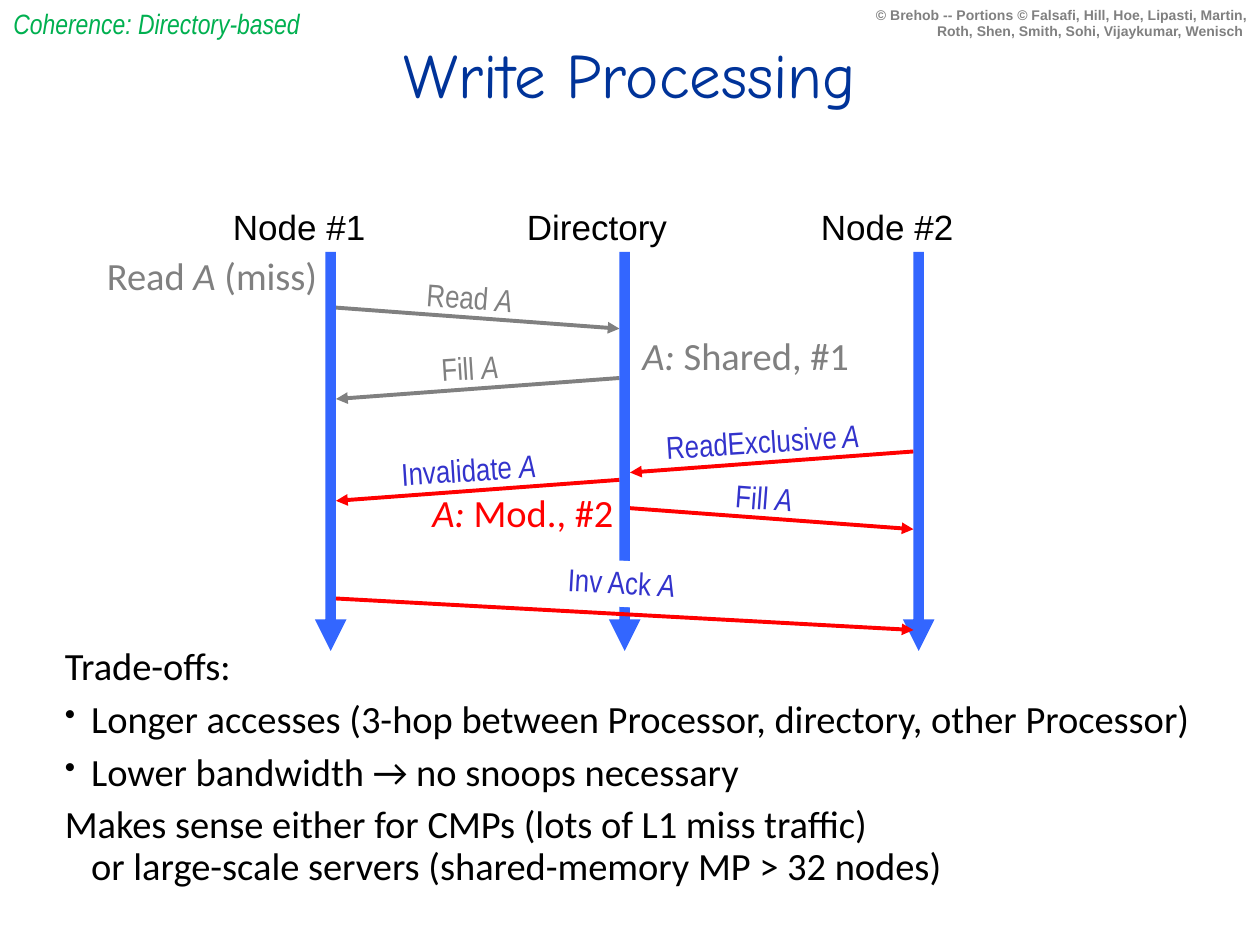
from pptx import Presentation
from pptx.dml.color import RGBColor
from pptx.enum.shapes import MSO_CONNECTOR, MSO_SHAPE
from pptx.enum.text import MSO_ANCHOR, PP_ALIGN
from pptx.oxml.ns import qn
from pptx.util import Inches, Pt
from lxml import etree

LEFT, MID, RIGHT = PP_ALIGN.LEFT, PP_ALIGN.CENTER, PP_ALIGN.RIGHT
TOP, CENTRE = MSO_ANCHOR.TOP, MSO_ANCHOR.MIDDLE
LINE, RECT = MSO_CONNECTOR.STRAIGHT, MSO_SHAPE.RECTANGLE
GRAY, RED, BLUE, INK = "808080", "FF0000", "3366FF", "3333CC"
LANES = {"Node #1": 31, "Directory": 59, "Node #2": 87}
ONE, DIR, TWO = LANES.values()


def rgb(code):
    return RGBColor.from_string(code)


def unit(n):
    """Turn grid steps into a length: 120 columns by 90 rows, 12 to the inch."""
    return Inches(n / 12)


def write(par, text, font="Calibri", size=22, color="000000", bold=False, italic=False):
    """Fill a paragraph; *stars* flip italics and a newline breaks the line."""
    for i, part in enumerate(text.split("*")):
        for j, piece in enumerate(part.split("\n")):
            if j:
                par.add_line_break()
            if not piece:
                continue
            run = par.add_run()
            run.text = piece
            run.font.name, run.font.size = font, Pt(size)
            run.font.color.rgb = rgb(color)
            run.font.bold = bold
            run.font.italic = italic != bool(i % 2)


class Board:
    def __init__(self, deck):
        self.slide = deck.slides.add_slide(deck.slide_layouts[6])
        self.shapes = self.slide.shapes

    def text(self, box, lines, align=LEFT, anchor=TOP, wrap=True, turn=0,
             space=None, before=0, **style):
        shape = self.shapes.add_textbox(*map(unit, box))
        shape.rotation = turn
        frame = shape.text_frame
        frame.word_wrap, frame.vertical_anchor = wrap, anchor
        for i, line in enumerate(lines):
            par = frame.paragraphs[0] if i == 0 else frame.add_paragraph()
            par.alignment, par.line_spacing = align, space
            par.space_before = Pt(before)
            write(par, line, **style)
        return shape

    def bullet(self, par, mark):
        """Hang the paragraph by a quarter inch or so, with a mark if given."""
        props = par._p.get_or_add_pPr()
        props.set("marL", str(unit(2.5)))
        props.set("indent", str(-unit(2.5)))
        if mark:
            etree.SubElement(props, qn("a:buSzPct")).set("val", "80000")
            etree.SubElement(props, qn("a:buChar")).set("char", mark)

    def arrow(self, x1, y1, x2, y2, color, width=2.25):
        line = self.shapes.add_connector(LINE, *map(unit, (x1, y1, x2, y2)))
        line.line.color.rgb, line.line.width = rgb(color), Pt(width)
        tail = etree.SubElement(line.line._get_or_add_ln(), qn("a:tailEnd"))
        tail.set("type", "triangle")
        etree.SubElement(line._element.spPr, qn("a:effectLst"))

    def bar(self, x, y, w, h, color):
        shape = self.shapes.add_shape(RECT, *map(unit, (x, y, w, h)))
        shape.shadow.inherit = False
        shape.fill.solid()
        shape.fill.fore_color.rgb = rgb(color)
        shape.line.fill.background()

    def send(self, start, end, y, text, wide, color, ink):
        """Draw a message between two lanes, its label tilted along the arrow."""
        right = end > start
        x1, x2 = (start + 1, end) if right else (start, end + 1)
        self.arrow(x1, y, x2, y + 2, color)
        x, mid = (x1 + x2) / 2 - 0.7, y - 0.8
        self.text((x - wide / 2, mid - 2.2, wide, 4.4), [text], wrap=False,
                  turn=4.3 if right else -3.7, space=0.9,
                  font="Arial Narrow", size=18, color=ink)


def main():
    deck = Presentation()
    deck.slide_width, deck.slide_height = unit(120), unit(90)
    board = Board(deck)

    board.text((82, 0, 38, 4.4),
               ["© Brehob -- Portions © Falsafi, Hill, Hoe, Lipasti, Martin, "
                "Roth, Shen, Smith, Sohi, Vijaykumar, Wenisch "],
               align=RIGHT, font="Arial", size=8, color=GRAY, bold=True)
    board.text((4.5, 3, 111, 8), ["Write Processing"], align=MID, anchor=CENTRE,
               font="Comic Neue", size=36, color="003399")
    board.text((0.1, 0, 29.9, 4.4), ["Coherence: Directory-based"], wrap=False,
               font="Arial Narrow", size=16, color="00B050", italic=True)

    for name, x in LANES.items():
        board.text((x - 10, 19, 21, 5.2), [name], font="Arial", size=20)
        board.arrow(x + 0.5, 59, x + 0.5, 62, BLUE, width=6)

    for start, end, y, text, wide, color, ink in (
        (ONE, DIR, 29.3, "Read *A*", 10.7, GRAY, GRAY),
        (DIR, ONE, 36, "Fill *A*", 7.9, GRAY, GRAY),
        (TWO, DIR, 43, "ReadExclusive* A*", 21.1, RED, INK),
        (DIR, ONE, 45.7, "Invalidate *A*", 15.5, RED, INK),
        (DIR, TWO, 48.4, "Fill *A*", 7.9, RED, INK),
    ):
        board.send(start, end, y, text, wide, color, ink)

    for x in LANES.values():
        board.bar(x, 24, 1, 36, BLUE)

    for x, y, wide, text, color in (
        (9, 23.4, 24, "Read *A* (miss)", GRAY),
        (60, 31, 27, "*A:* Shared, #1", GRAY),
        (40, 46, 27, "*A:* Mod., #2", RED),
    ):
        board.text((x, y, wide, 5.6), [text], color=color)

    ack = board.text((47.9, 53.4, 22.6, 4.4), ["Inv Ack *A*"], align=MID, turn=3.2,
                     space=0.9, font="Arial Narrow", size=18, color=INK)
    ack.fill.solid()
    ack.fill.fore_color.rgb = rgb("FFFFFF")
    board.arrow(ONE + 1, 57, TWO, 60, RED)

    notes = {
        "Trade-offs:": "",
        "Longer accesses (3-hop between Processor, directory, other Processor)": "•",
        "Lower bandwidth → no snoops necessary": "•",
        "Makes sense either for CMPs (lots of L1 miss traffic) \n"
        "or large-scale servers (shared-memory MP > 32 nodes)": "",
    }
    body = board.text((5, 61, 112, 29), notes, space=Pt(24), before=6)
    for par, mark in zip(body.text_frame.paragraphs, notes.values()):
        board.bullet(par, mark)

    deck.save("out.pptx")


if __name__ == "__main__":
    main()
